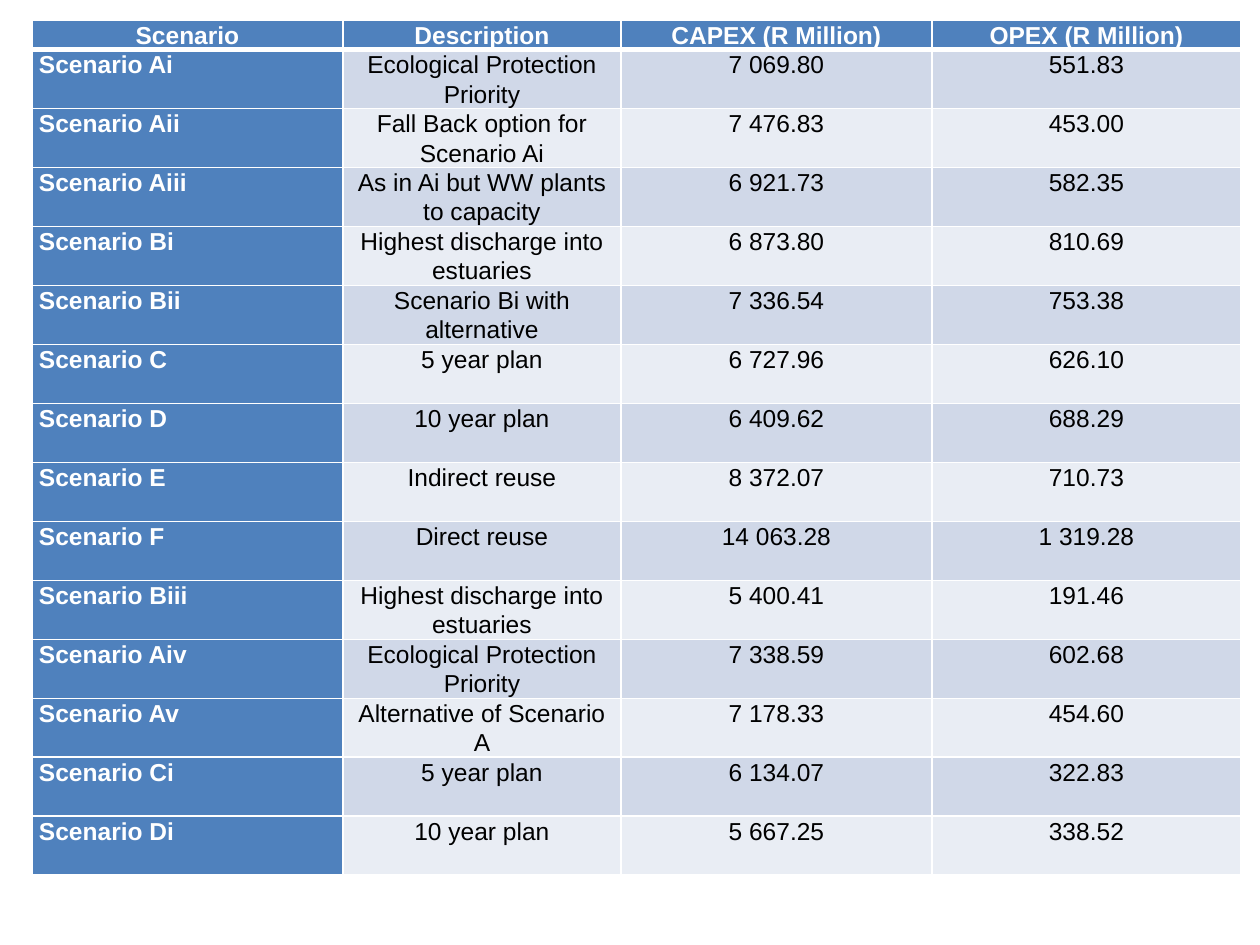
from lxml import etree
from pptx import Presentation, util as u
from pptx.dml.color import RGBColor
from pptx.enum import text
from pptx.oxml.ns import qn

# Content
HEAD = ("Scenario", "Description", "CAPEX (R Million)", "OPEX (R Million)")
ROWS = [
    ("Scenario Ai", "Ecological Protection Priority", "7 069.80", "551.83"),
    ("Scenario Aii", "Fall Back option for Scenario Ai", "7 476.83", "453.00"),
    ("Scenario Aiii", "As in Ai but WW plants to capacity", "6 921.73", "582.35"),
    ("Scenario Bi", "Highest discharge into estuaries", "6 873.80", "810.69"),
    ("Scenario Bii", "Scenario Bi with alternative", "7 336.54", "753.38"),
    ("Scenario C", "5 year plan", "6 727.96", "626.10"),
    ("Scenario D", "10 year plan", "6 409.62", "688.29"),
    ("Scenario E", "Indirect reuse", "8 372.07", "710.73"),
    ("Scenario F", "Direct reuse", "14 063.28", "1 319.28"),
    ("Scenario Biii", "Highest discharge into estuaries", "5 400.41", "191.46"),
    ("Scenario Aiv", "Ecological Protection Priority", "7 338.59", "602.68"),
    ("Scenario Av", "Alternative of Scenario A", "7 178.33", "454.60"),
    ("Scenario Ci", "5 year plan", "6 134.07", "322.83"),
    ("Scenario Di", "10 year plan", "5 667.25", "338.52"),
]
COLORS = {"blue": "4F81BD", "dark": "D0D8E8", "light": "E9EDF4",
          "white": "FFFFFF", "black": "000000"}

# Layout in px, 126 to the inch
PX = u.Inches(1) // 126
LEFT, TOP = 32, 20
COLS = (311, 278, 311, 309)
HEAD_H, ROW_H = 29, 59
INSET = 7


def color(name):
    return RGBColor.from_string(COLORS[name])


def edge(cell, side, width):
    line = etree.SubElement(cell._tc.get_or_add_tcPr(), qn("a:ln" + side),
                            w=str(u.Pt(width)))
    fill = etree.SubElement(line, qn("a:solidFill"))
    etree.SubElement(fill, qn("a:srgbClr"), val=COLORS["white"])


def style(cell, words, row, col):
    # Edges come before the fill; the rule under the header is thick
    for side in "LRTB":
        thick = (row, side) in ((0, "B"), (1, "T"))
        edge(cell, side, 3 if thick else 1)
    label = row == 0 or col == 0
    band = "dark" if row % 2 else "light"
    cell.fill.solid()
    cell.fill.fore_color.rgb = color("blue" if label else band)
    cell.margin_left = cell.margin_right = INSET * PX
    cell.margin_top = cell.margin_bottom = 0

    cell.text_frame.text = words
    para = cell.text_frame.paragraphs[0]
    left = col == 0 and row > 0
    para.alignment = text.PP_ALIGN.LEFT if left else text.PP_ALIGN.CENTER
    para.line_spacing = 1.07
    font = para.runs[0].font
    font.name, font.size, font.bold = "Arial", u.Pt(14), label
    font.color.rgb = color("white" if label else "black")


def main():
    prs = Presentation()
    prs.slide_width, prs.slide_height = u.Inches(10), u.Inches(7.5)
    slide = prs.slides.add_slide(prs.slide_layouts[6])

    # Scenario cost table
    data = [HEAD] + ROWS
    high = HEAD_H + ROW_H * len(ROWS)
    table = slide.shapes.add_table(
        len(data), len(COLS), LEFT * PX, TOP * PX, sum(COLS) * PX, high * PX).table
    for col, wide in enumerate(COLS):
        table.columns[col].width = wide * PX
    for row, line in enumerate(data):
        table.rows[row].height = (ROW_H if row else HEAD_H) * PX
        for col, words in enumerate(line):
            style(table.cell(row, col), words, row, col)

    prs.save("out.pptx")


if __name__ == "__main__":
    main()
